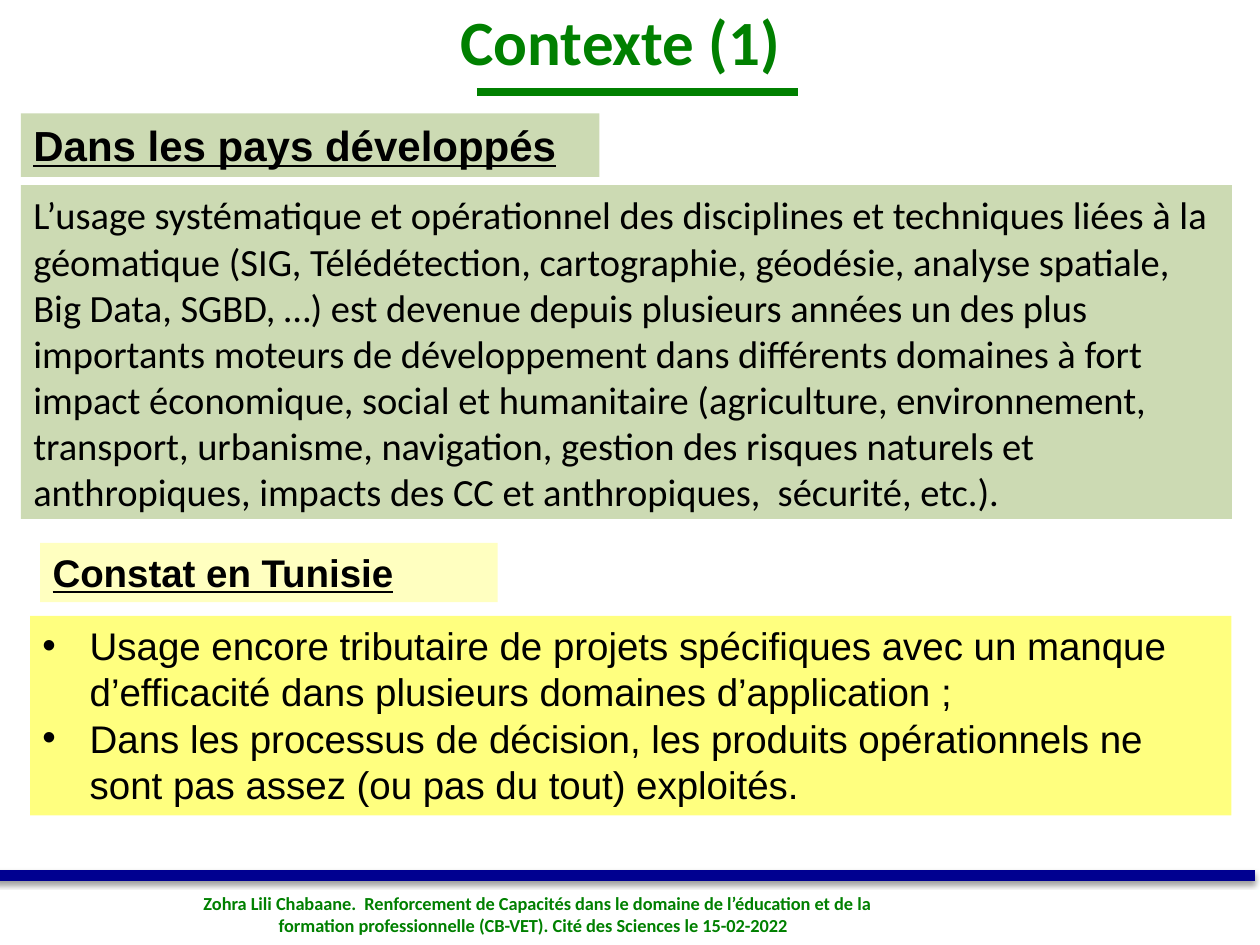
from dataclasses import dataclass

from lxml.etree import SubElement
from pptx import Presentation
from pptx.dml.color import RGBColor as RGB
from pptx.enum.shapes import MSO_CONNECTOR as Connector, MSO_SHAPE as Shape
from pptx.enum.text import MSO_ANCHOR as Anchor, PP_ALIGN as Align
from pptx.oxml.ns import qn
from pptx.util import Pt


@dataclass(frozen=True)
class Theme:
    green: RGB = RGB(0x00, 0x80, 0x00)
    navy: RGB = RGB(0x00, 0x00, 0x90)
    sage: RGB = RGB(0xCC, 0xDA, 0xB3)
    cream: RGB = RGB(0xFF, 0xFF, 0xC0)
    yellow: RGB = RGB(0xFF, 0xFF, 0x00)
    black: RGB = RGB(0x00, 0x00, 0x00)
    title_size: float = 36
    heading_size: float = 24
    body_size: float = 22
    footer_size: float = 10.5
    sans: str = "Arial"
    humanist: str = "Calibri"


THEME = Theme()
BULLET_INDENT = Pt(27)


def add_bullet(paragraph):
    properties = paragraph._p.get_or_add_pPr()
    properties.set("marL", str(BULLET_INDENT))
    properties.set("indent", str(-BULLET_INDENT))
    SubElement(properties, qn("a:buFont"), typeface=THEME.sans)
    SubElement(properties, qn("a:buChar"), char="•")


def write(holder, *texts, size=THEME.body_size, font=THEME.sans, color=THEME.black,
          bold=False, underline=False, align=Align.LEFT, bullets=False):
    frame = holder.text_frame
    frame.word_wrap = True
    frame.vertical_anchor = Anchor.TOP
    for index, text in enumerate(texts):
        paragraph = frame.paragraphs[0] if index == 0 else frame.add_paragraph()
        paragraph.alignment = align
        if bullets:
            add_bullet(paragraph)
        run = paragraph.add_run()
        run.text = text
        run.font.size = Pt(size)
        run.font.name = font
        run.font.color.rgb = color
        run.font.bold = bold
        run.font.underline = underline


def add_label(slide, left, top, width, height, *texts, **style):
    label = slide.shapes.add_textbox(Pt(left), Pt(top), Pt(width), Pt(height))
    write(label, *texts, **style)


def add_panel(slide, left, top, width, height, fill, *texts, opacity=None, **style):
    panel = slide.shapes.add_shape(
        Shape.RECTANGLE, Pt(left), Pt(top), Pt(width), Pt(height))
    panel.shadow.inherit = False
    panel.line.fill.background()
    panel.fill.solid()
    panel.fill.fore_color.rgb = fill
    if opacity is not None:
        color = panel._element.spPr.find(qn("a:solidFill"))[0]
        SubElement(color, qn("a:alpha"), val=str(opacity * 1000))
    write(panel, *texts, **style)


def add_rule(slide, start, end, top, color, weight, shadowed=False):
    rule = slide.shapes.add_connector(
        Connector.STRAIGHT, Pt(start), Pt(top), Pt(end), Pt(top))
    rule.line.color.rgb = color
    rule.line.width = Pt(weight)
    effects = SubElement(rule._element.spPr, qn("a:effectLst"))
    if shadowed:
        shadow = SubElement(effects, qn("a:outerShdw"), blurRad=str(Pt(3.1)),
                            dist=str(Pt(1.6)), dir="5400000", rotWithShape="0")
        shade = SubElement(shadow, qn("a:srgbClr"), val=str(THEME.black))
        SubElement(shade, qn("a:alpha"), val="38000")


def add_footer(slide):
    add_rule(slide, -3, 717, 500.4, THEME.navy, 6, shadowed=True)
    add_label(
        slide, 105, 506.2, 402, 56,
        " Zohra Lili Chabaane.  Renforcement de Capacités dans le domaine de l’éducation "
        "et de la formation professionnelle (CB-VET). Cité des Sciences le 15-02-2022 ",
        size=THEME.footer_size, font=THEME.humanist, color=THEME.green,
        bold=True, align=Align.CENTER)


def add_title(slide):
    add_label(slide, 34.5, -2.2, 648, 51, "Contexte (1) ", size=THEME.title_size,
              font=THEME.humanist, color=THEME.green, bold=True, align=Align.CENTER)
    add_rule(slide, 272.5, 456, 52.5, THEME.green, 4.5)


def add_developed_countries(slide):
    add_panel(
        slide, 12, 105.8, 692, 190.8, THEME.sage,
        "L’usage systématique et opérationnel des disciplines et techniques liées à la "
        "géomatique (SIG, Télédétection, cartographie, géodésie, analyse spatiale, "
        "Big Data, SGBD, …) est devenue depuis plusieurs années un des plus importants "
        "moteurs de développement dans différents domaines à fort impact économique, "
        "social et humanitaire (agriculture, environnement, transport, urbanisme, "
        "navigation, gestion des risques naturels et anthropiques, impacts des CC et "
        "anthropiques,  sécurité, etc.).",
        font=THEME.humanist)
    add_panel(slide, 12, 64.8, 330.5, 36.4, THEME.sage, "Dans les pays développés",
              size=THEME.heading_size, bold=True, underline=True)


def add_tunisia(slide):
    add_panel(
        slide, 17.2, 352, 686.5, 114, THEME.yellow,
        "Usage encore tributaire de projets spécifiques avec un manque d’efficacité "
        "dans plusieurs domaines d’application ;",
        "Dans les processus de décision, les produits opérationnels ne sont pas assez "
        "(ou pas du tout) exploités.",
        opacity=50, bullets=True)
    add_panel(slide, 23, 310.3, 261.4, 33.8, THEME.cream, "Constat en Tunisie",
              bold=True, underline=True)


def main():
    deck = Presentation()
    deck.slide_width, deck.slide_height = Pt(720), Pt(540)
    slide = deck.slides.add_slide(deck.slide_layouts[6])
    add_footer(slide)
    add_title(slide)
    add_developed_countries(slide)
    add_tunisia(slide)
    deck.save("out.pptx")


if __name__ == "__main__":
    main()
